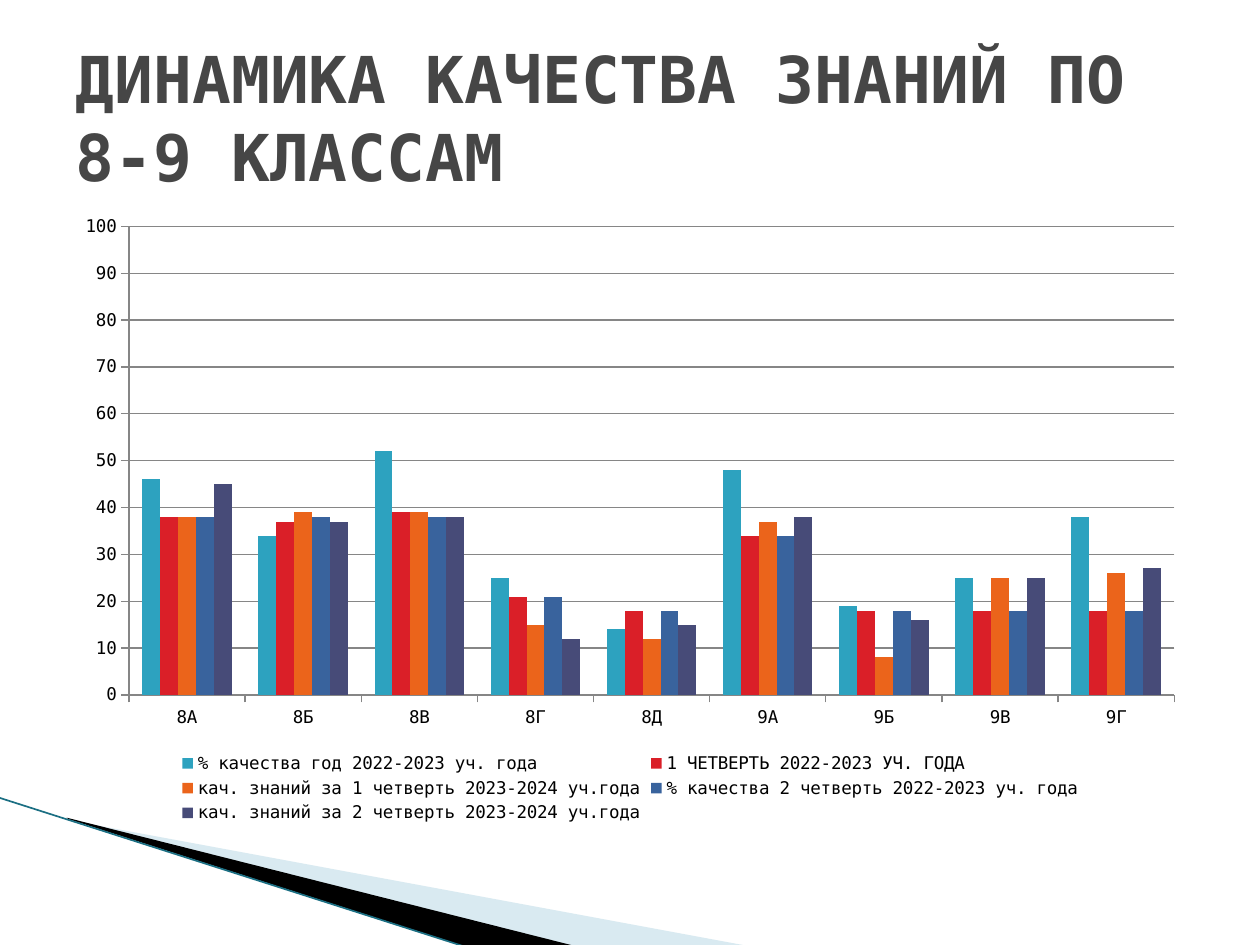
from dataclasses import dataclass
from typing import Optional

from pptx import Presentation
from pptx.chart.data import CategoryChartData as Data
from pptx.dml.color import RGBColor as Rgb
from pptx.enum.chart import XL_CHART_TYPE as Kind, XL_LEGEND_POSITION as Side, XL_TICK_MARK as Tick
from pptx.enum.shapes import MSO_CONNECTOR as Link
from pptx.enum.text import MSO_ANCHOR as Anchor, PP_ALIGN as Align
from pptx.oxml.ns import qn
from pptx.util import Inches, Pt
from lxml.etree import SubElement


@dataclass(frozen=True)
class Theme:
    """Colours and type sizes of the slide."""
    font: str = "DejaVu Sans Mono"
    title: str = "464646"
    ink: str = "000000"
    grid: str = "868686"
    pale: str = "A0CBDC"
    edge: str = "1B6F83"
    big: float = 36.9
    small: float = 10


@dataclass(frozen=True)
class Wedge:
    """A filled outline given by its corners in inches."""
    points: tuple
    color: str
    alpha: Optional[int] = None


@dataclass(frozen=True)
class Series:
    """One coloured set of bars."""
    name: str
    color: str
    values: tuple


LOOK = Theme()
WEDGES = (
    Wedge(((0.55, 6.51), (5.95, 7.51), (4.56, 7.51), (0.55, 6.5)), LOOK.pale, 40),
    Wedge(((0.53, 6.49), (4.57, 7.51), (3.72, 7.52), (0.54, 6.5)), LOOK.ink),
)
GRADES = ("8А", "8Б", "8В", "8Г", "8Д", "9А", "9Б", "9В", "9Г")
BARS = (
    Series("% качества год 2022-2023 уч. года", "2DA2BF", (46, 34, 52, 25, 14, 48, 19, 25, 38)),
    Series("1 ЧЕТВЕРТЬ 2022-2023 УЧ. ГОДА", "DA1F28", (38, 37, 39, 21, 18, 34, 18, 18, 18)),
    Series("кач. знаний за 1 четверть 2023-2024 уч.года", "EB641B", (38, 39, 39, 15, 12, 37, 8, 25, 26)),
    Series("% качества 2 четверть 2022-2023 уч. года", "39639D", (38, 38, 38, 21, 18, 34, 18, 18, 18)),
    Series("кач. знаний за 2 четверть 2023-2024 уч.года", "474B78", (45, 37, 38, 12, 15, 38, 16, 25, 27)),
)


def paint(fill, color: str) -> None:
    """Make a fill solid in one colour."""
    fill.solid()
    fill.fore_color.rgb = Rgb.from_string(color)


def style(font, size: float, color: str, bold: bool = False) -> None:
    """Set the face, size, colour and weight of a font."""
    font.name, font.size, font.bold = LOOK.font, Pt(size), bold
    font.color.rgb = Rgb.from_string(color)


def write(shape, text: str, *, size: float, color: str, bold: bool = False) -> None:
    """Put left-aligned, middle-anchored text in a shape."""
    frame = shape.text_frame
    frame.word_wrap, frame.vertical_anchor = True, Anchor.MIDDLE
    para = frame.paragraphs[0]
    para.alignment = Align.LEFT
    run = para.add_run()
    run.text = text
    style(run.font, size, color, bold)


def place(shape, left: float, top: float, width: float, height: float) -> None:
    """Move and size a shape in inches."""
    shape.left, shape.top = Inches(left), Inches(top)
    shape.width, shape.height = Inches(width), Inches(height)


def draw_wedge(slide, wedge: Wedge) -> None:
    """Draw one wedge without an outline."""
    first, *rest = [(Inches(x), Inches(y)) for x, y in wedge.points]
    path = slide.shapes.build_freeform(*first)
    path.add_line_segments(rest, close=True)
    shape = path.convert_to_shape()
    shape.shadow.inherit = False
    shape.line.fill.background()
    paint(shape.fill, wedge.color)
    if wedge.alpha is not None:
        tint = shape.fill._xPr.find(".//" + qn("a:srgbClr"))
        SubElement(tint, qn("a:alpha")).set("val", str(wedge.alpha * 1000))


def draw_edge(slide) -> None:
    """Draw the thin line along the wedges."""
    line = slide.shapes.add_connector(
        Link.STRAIGHT, Inches(-0.01), Inches(6.33), Inches(3.71), Inches(7.52))
    line.line.width = Pt(0.95)
    line.line.color.rgb = Rgb.from_string(LOOK.edge)
    SubElement(line._element.spPr, qn("a:effectLst"))


def draw_chart(slide) -> None:
    """Draw the clustered columns with axes and legend."""
    data = Data()
    data.categories = GRADES
    for item in BARS:
        data.add_series(item.name, item.values)
    chart = slide.shapes.add_chart(
        Kind.COLUMN_CLUSTERED, Inches(0.5), Inches(1.62), Inches(9), Inches(4.95), data).chart
    style(chart.font, LOOK.small, LOOK.ink)
    chart.has_title = False
    chart.has_legend = True
    chart.legend.position = Side.BOTTOM
    chart.legend.include_in_layout = False

    plot = chart.plots[0]
    plot.gap_width, plot.overlap, plot.vary_by_categories = 150, 0, False
    for bar, item in zip(plot.series, BARS):
        paint(bar.format.fill, item.color)
        bar.invert_if_negative = False

    scale = chart.value_axis
    scale.minimum_scale, scale.maximum_scale, scale.major_unit = 0, 100, 10
    scale.has_major_gridlines = True
    for axis in (chart.category_axis, scale):
        axis.major_tick_mark, axis.minor_tick_mark = Tick.OUTSIDE, Tick.NONE
    for part in (chart.category_axis, scale, scale.major_gridlines):
        part.format.line.width = Pt(0.75)
        part.format.line.color.rgb = Rgb.from_string(LOOK.grid)


def main() -> None:
    """Build and save the slide."""
    deck = Presentation()
    deck.slide_width, deck.slide_height = Inches(10), Inches(7.5)
    slide = deck.slides.add_slide(deck.slide_layouts[5])
    paint(slide.background.fill, "FFFFFF")
    for wedge in WEDGES:
        draw_wedge(slide, wedge)
    draw_edge(slide)
    draw_chart(slide)
    title = slide.shapes.title
    place(title, 0.5, 0.3, 9, 1.25)
    write(title, "ДИНАМИКА КАЧЕСТВА ЗНАНИЙ ПО 8-9 КЛАССАМ",
          size=LOOK.big, color=LOOK.title, bold=True)
    deck.save("out.pptx")


if __name__ == "__main__":
    main()
